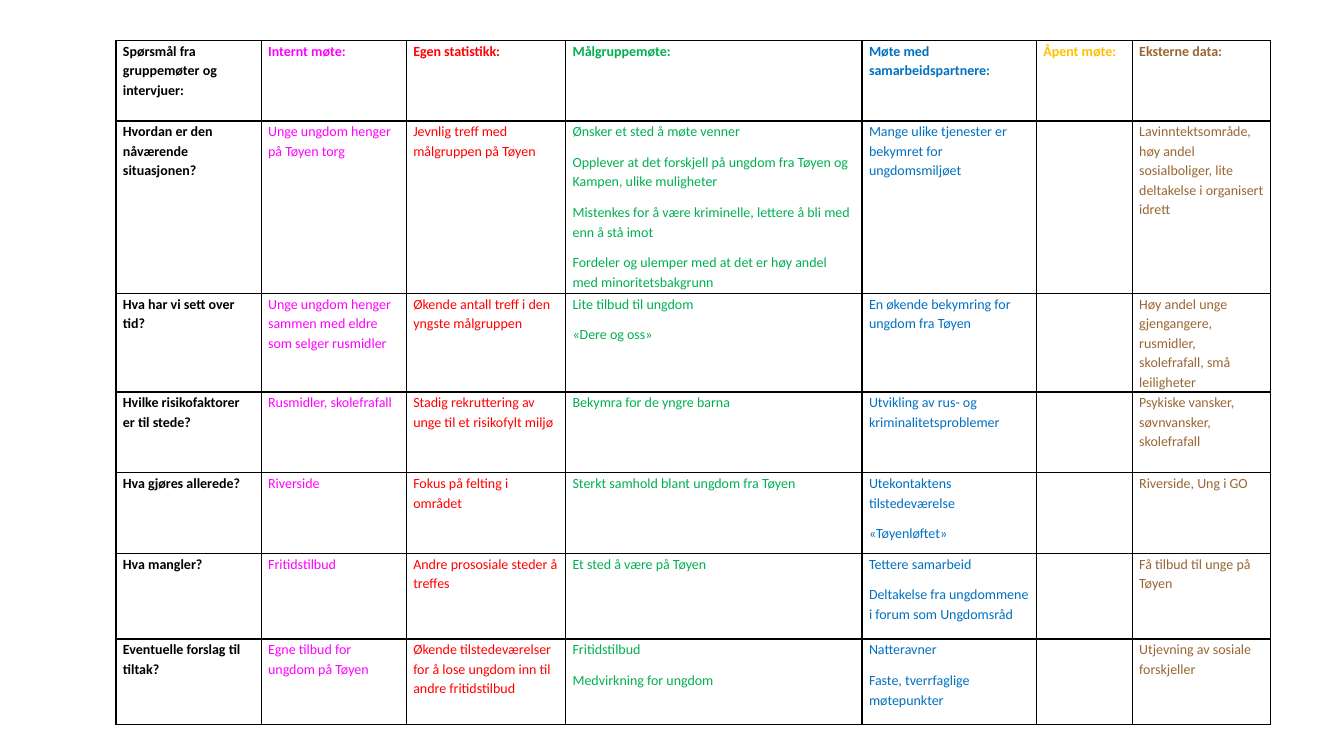
from dataclasses import dataclass

from lxml.etree import SubElement
from pptx import Presentation
from pptx.dml.color import RGBColor
from pptx.oxml.ns import qn
from pptx.table import Table, _Cell
from pptx.util import Inches, Pt

BLACK = RGBColor(0x00, 0x00, 0x00)
MAGENTA = RGBColor(0xFF, 0x00, 0xFF)
RED = RGBColor(0xFF, 0x00, 0x00)
GREEN = RGBColor(0x00, 0xB0, 0x50)
BLUE = RGBColor(0x00, 0x70, 0xC0)
AMBER = RGBColor(0xFF, 0xC0, 0x00)
BROWN = RGBColor(0x99, 0x66, 0x33)


@dataclass(frozen=True)
class Source:
    """One column: a source of answers, with its own text colour."""
    heading: str
    width: float
    color: RGBColor


@dataclass(frozen=True)
class Question:
    """One row: a question and the answers from each source."""
    height: float
    text: str
    internal: str
    statistics: str
    target_group: str
    partners: str
    external: str
    open_meeting: str = ""

    def cells(self) -> list[str]:
        return [self.text, self.internal, self.statistics, self.target_group,
                self.partners, self.open_meeting, self.external]


SOURCES = [
    Source("Spørsmål fra gruppemøter og intervjuer:", 1.44, BLACK),
    Source("Internt møte:", 1.44, MAGENTA),
    Source("Egen statistikk:", 1.58, RED),
    Source("Målgruppemøte:", 2.94, GREEN),
    Source("Møte med samarbeidspartnere:", 1.73, BLUE),
    Source("Åpent møte:", 0.95, AMBER),
    Source("Eksterne data:", 1.37, BROWN),
]
HEADING_HEIGHT = 0.8

# A line break in an answer starts a new paragraph
QUESTIONS = [
    Question(1.71, "Hvordan er den nåværende situasjonen?",
             "Unge ungdom henger på Tøyen torg",
             "Jevnlig treff med målgruppen på Tøyen",
             "Ønsker et sted å møte venner\n"
             "Opplever at det forskjell på ungdom fra Tøyen og Kampen, ulike muligheter\n"
             "Mistenkes for å være kriminelle, lettere å bli med enn å stå imot\n"
             "Fordeler og ulemper med at det er høy andel med minoritetsbakgrunn",
             "Mange ulike tjenester er bekymret for ungdomsmiljøet",
             "Lavinntektsområde, høy andel sosialboliger, lite deltakelse i organisert idrett"),
    Question(0.98, "Hva har vi sett over tid?",
             "Unge ungdom henger sammen med eldre som selger rusmidler",
             "Økende antall treff i den yngste målgruppen",
             "Lite tilbud til ungdom\n«Dere og oss»",
             "En økende bekymring for ungdom fra Tøyen",
             "Høy andel unge gjengangere, rusmidler, skolefrafall, små leiligheter"),
    Question(0.8, "Hvilke risikofaktorer er til stede?",
             "Rusmidler, skolefrafall",
             "Stadig rekruttering av unge til et risikofylt miljø",
             "Bekymra for de yngre barna",
             "Utvikling av rus- og kriminalitetsproblemer",
             "Psykiske vansker, søvnvansker, skolefrafall"),
    Question(0.8, "Hva gjøres allerede?",
             "Riverside",
             "Fokus på felting i området",
             "Sterkt samhold blant ungdom fra Tøyen",
             "Utekontaktens tilstedeværelse\n«Tøyenløftet»",
             "Riverside, Ung i GO"),
    Question(0.85, "Hva mangler?",
             "Fritidstilbud",
             "Andre prososiale steder å treffes",
             "Et sted å være på Tøyen",
             "Tettere samarbeid\nDeltakelse fra ungdommene i forum som Ungdomsråd",
             "Få tilbud til unge på Tøyen"),
    Question(0.85, "Eventuelle forslag til tiltak?",
             "Egne tilbud for ungdom på Tøyen",
             "Økende tilstedeværelser for å lose ungdom inn til andre fritidstilbud",
             "Fritidstilbud\nMedvirkning for ungdom",
             "Natteravner\nFaste, tverrfaglige møtepunkter",
             "Utjevning av sosiale forskjeller"),
]


def add_borders(cell: _Cell) -> None:
    properties = cell._tc.get_or_add_tcPr()
    for side in ("a:lnL", "a:lnR", "a:lnT", "a:lnB"):
        line = SubElement(properties, qn(side), w=str(Pt(1)))
        fill = SubElement(line, qn("a:solidFill"))
        SubElement(fill, qn("a:srgbClr"), val=str(BLACK))


def fill_cell(cell: _Cell, text: str, color: RGBColor, bold: bool) -> None:
    add_borders(cell)
    cell.fill.background()
    cell.margin_left = cell.margin_right = Inches(0.07)
    cell.margin_top = cell.margin_bottom = 0
    cell.text_frame.text = text
    for paragraph in cell.text_frame.paragraphs:
        paragraph.line_spacing = 1.15
        paragraph.space_after = Pt(8)
        for run in paragraph.runs:
            run.font.name = "Calibri"
            run.font.size = Pt(10)
            run.font.bold = bold
            run.font.color.rgb = color


def fill_matrix(matrix: Table) -> None:
    matrix.first_row = matrix.horz_banding = False
    heights = [HEADING_HEIGHT] + [question.height for question in QUESTIONS]
    for row, height in zip(matrix.rows, heights):
        row.height = Inches(height)
    texts = [[source.heading for source in SOURCES]]
    texts += [question.cells() for question in QUESTIONS]
    for c, source in enumerate(SOURCES):
        matrix.columns[c].width = Inches(source.width)
        for r, row_texts in enumerate(texts):
            fill_cell(matrix.cell(r, c), row_texts[c], source.color,
                      bold=r == 0 or c == 0)


def main() -> None:
    presentation = Presentation()
    presentation.slide_width = Inches(13.33)
    presentation.slide_height = Inches(7.5)
    slide = presentation.slides.add_slide(presentation.slide_layouts[6])

    # Matrix of questions against sources
    matrix = slide.shapes.add_table(
        len(QUESTIONS) + 1, len(SOURCES),
        Inches(1.15), Inches(0.4), Inches(11.45), Inches(6.81)).table
    fill_matrix(matrix)

    presentation.save("out.pptx")


if __name__ == "__main__":
    main()
